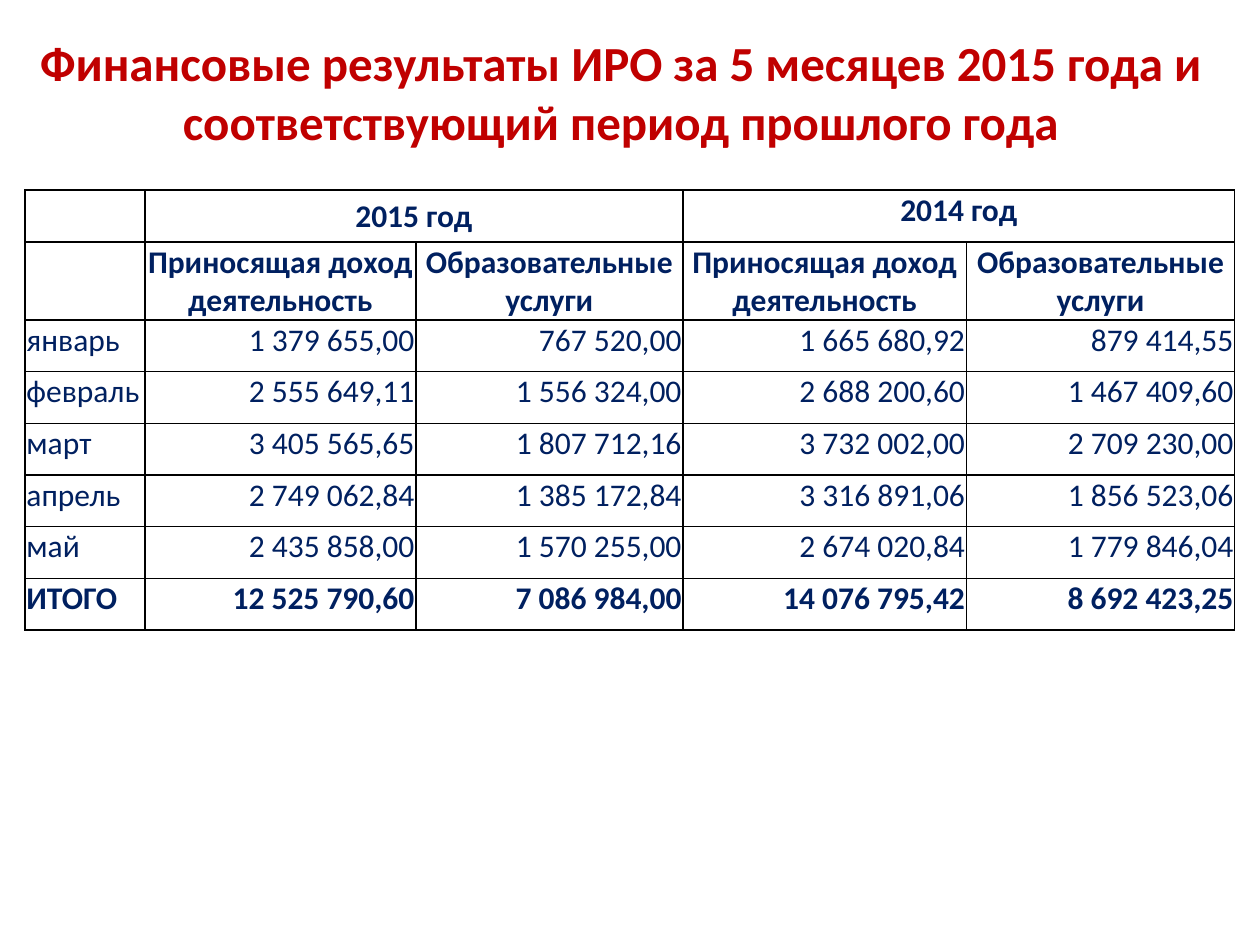
from lxml.etree import SubElement
from pptx import Presentation
from pptx.dml.color import RGBColor
from pptx.enum.text import MSO_ANCHOR, PP_ALIGN
from pptx.oxml.ns import qn
from pptx.util import Inches, Pt

TITLE = "Финансовые результаты ИРО за 5 месяцев 2015 года и соответствующий период прошлого года"
KINDS = ["Приносящая доход деятельность", "Образовательные услуги"]
ROWS = [
    ["", "2015 год", "", "2014 год", ""],
    ["", *KINDS, *KINDS],
    ["январь", "1 379 655,00", "767 520,00", "1 665 680,92", "879 414,55"],
    ["февраль", "2 555 649,11", "1 556 324,00", "2 688 200,60", "1 467 409,60"],
    ["март", "3 405 565,65", "1 807 712,16", "3 732 002,00", "2 709 230,00"],
    ["апрель", "2 749 062,84", "1 385 172,84", "3 316 891,06", "1 856 523,06"],
    ["май", "2 435 858,00", "1 570 255,00", "2 674 020,84", "1 779 846,04"],
    ["ИТОГО", "12 525 790,60", "7 086 984,00", "14 076 795,42", "8 692 423,25"],
]
COL_WIDTHS = [0.95, 2.15, 2.12, 2.25, 2.13]
ROW_HEIGHT = 0.41
HEADER_ROWS = 2
NAVY, RED, BLACK = "002060", "C00000", "000000"


def rgb(color):
    return RGBColor.from_string(color)


def add_text(tf, text, size, color, bold, align):
    p = tf.paragraphs[0]
    p.alignment = align
    r = p.add_run()
    r.text = text
    r.font.name = "Calibri"
    r.font.size = Pt(size)
    r.font.bold = bold
    r.font.color.rgb = rgb(color)


def add_title(s):
    sp = s.shapes.title
    sp.left, sp.top = Inches(0.2), Inches(0.21)
    sp.width, sp.height = Inches(9.45), Inches(1.04)
    tf = sp.text_frame
    tf.word_wrap = True
    tf.vertical_anchor = MSO_ANCHOR.TOP
    add_text(tf, TITLE, 28, RED, True, PP_ALIGN.CENTER)


def set_borders(cell, color, width):
    tcPr = cell._tc.get_or_add_tcPr()
    for side in ("lnL", "lnR", "lnT", "lnB"):
        ln = SubElement(tcPr, qn(f"a:{side}"), w=str(Pt(width)))
        fill = SubElement(ln, qn("a:solidFill"))
        SubElement(fill, qn("a:srgbClr"), val=color)


def format_cell(cell):
    set_borders(cell, BLACK, 1)
    cell.fill.background()
    cell.margin_left = cell.margin_right = cell.margin_top = Inches(0.01)
    cell.margin_bottom = 0


def cell_align(row, col):
    if row < HEADER_ROWS:
        return PP_ALIGN.CENTER
    return PP_ALIGN.RIGHT if col else PP_ALIGN.LEFT


def add_results_table(s):
    frame = s.shapes.add_table(len(ROWS), len(COL_WIDTHS), Inches(0.2), Inches(1.51),
                               Inches(sum(COL_WIDTHS)), Inches(ROW_HEIGHT * len(ROWS)))
    table = frame.table
    table.first_row = table.horz_banding = False
    for column, width in zip(table.columns, COL_WIDTHS):
        column.width = Inches(width)
    for i, values in enumerate(ROWS):
        table.rows[i].height = Inches(ROW_HEIGHT)
        bold = i < HEADER_ROWS or i == len(ROWS) - 1
        for j, value in enumerate(values):
            cell = table.cell(i, j)
            format_cell(cell)
            if value:
                add_text(cell.text_frame, value, 18, NAVY, bold, cell_align(i, j))
    for col in (1, 3):
        table.cell(0, col).merge(table.cell(0, col + 1))
    table.cell(0, 1).vertical_anchor = MSO_ANCHOR.MIDDLE


def main():
    prs = Presentation()
    prs.slide_width, prs.slide_height = Inches(10), Inches(7.5)
    s = prs.slides.add_slide(prs.slide_layouts[5])
    add_title(s)
    add_results_table(s)
    prs.save("out.pptx")


if __name__ == "__main__":
    main()
